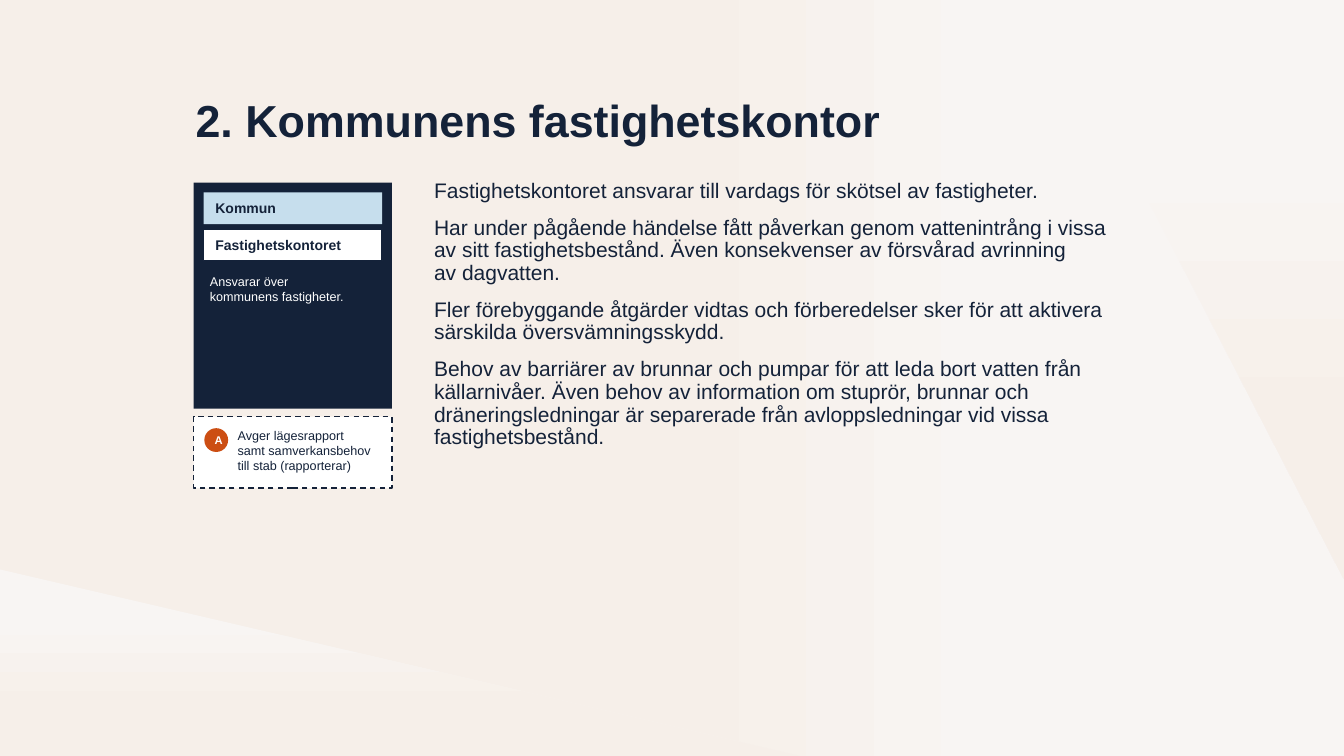
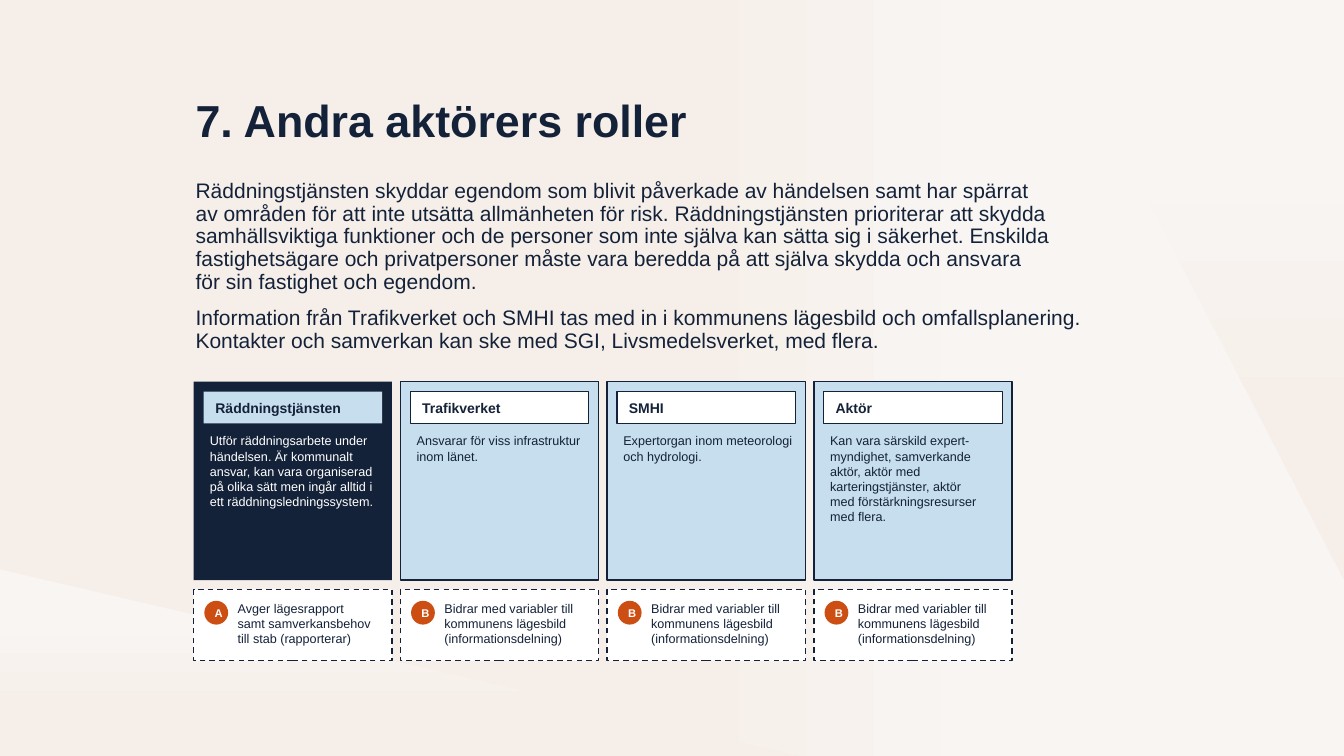
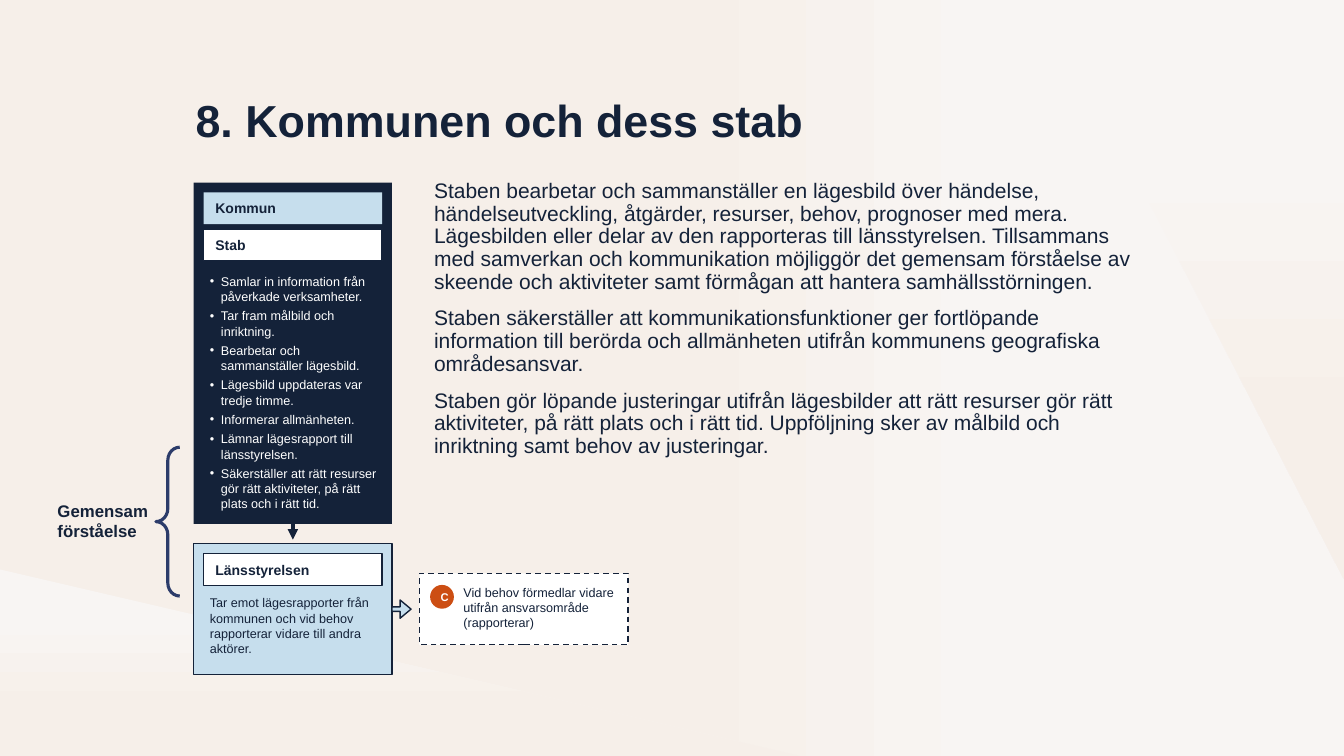
from dataclasses import dataclass

from lxml.etree import SubElement
from pptx import Presentation
from pptx.dml.color import RGBColor
from pptx.enum.dml import MSO_LINE
from pptx.enum.shapes import MSO_CONNECTOR, MSO_SHAPE as Preset
from pptx.enum.text import MSO_ANCHOR as Anchor, PP_ALIGN as Align
from pptx.oxml.ns import qn
from pptx.util import Cm, Pt


@dataclass(frozen=True)
class TextStyle:
    """Type size, colour, weight and paragraph spacing of one kind of text."""

    size: int
    color: RGBColor
    bold: bool = False
    line_spacing: float = 1.0
    before: int = 0
    after: int = 0
    align: Align = Align.LEFT
    bullet: bool = False


class Theme:
    """Colours, type and measures shared by all slides."""

    font = "Arial"
    navy = RGBColor.from_string("142239")
    light_blue = RGBColor.from_string("C6DEED")
    white = RGBColor.from_string("FFFFFF")
    orange = RGBColor.from_string("CC4E13")
    brace = RGBColor.from_string("2C3C6A")
    sand = RGBColor.from_string("F6EFE9")
    pale = RGBColor.from_string("F8F5F3")

    title = TextStyle(32, navy, bold=True, line_spacing=0.9)
    body = TextStyle(15, navy, line_spacing=0.9, before=10)
    label = TextStyle(10, navy, bold=True)
    small = TextStyle(9, navy)
    small_light = TextStyle(9, white)
    bullets = TextStyle(9, white, after=3, bullet=True)
    badge = TextStyle(8, white, bold=True, align=Align.CENTER)
    caption = TextStyle(12, navy, bold=True)

    slide_width, slide_height = Cm(33.87), Cm(19.05)
    left, card_top, card_width = Cm(4.88), Cm(4.6), Cm(5)
    card_pitch = Cm(5.21)
    report_height = Cm(1.8)
    text_left, text_top = Cm(4.68), Cm(4.42)
    side_text_left = Cm(10.69)
    text_right = Cm(28.75)


def set_gradient(fill, angle, stops):
    """Give a fill a linear gradient between two (position, colour) stops."""
    fill.gradient()
    fill.gradient_angle = angle
    for stop, (position, color) in zip(fill.gradient_stops, stops):
        stop.position = position
        stop.color.rgb = color


def add_bullet(paragraph):
    """Turn a paragraph into a hanging bullet."""
    properties = paragraph._p.get_or_add_pPr()
    properties.set("marL", str(Cm(0.28)))
    properties.set("indent", str(-Cm(0.28)))
    SubElement(properties, qn("a:buFont")).set("typeface", Theme.font)
    SubElement(properties, qn("a:buChar")).set("char", "•")


def write(shape, texts, style, anchor=Anchor.TOP, margins=None):
    """Fill a shape with paragraphs in one style."""
    frame = shape.text_frame
    frame.word_wrap = True
    frame.vertical_anchor = anchor
    if margins:
        (frame.margin_left, frame.margin_top,
         frame.margin_right, frame.margin_bottom) = margins
    for index, text in enumerate(texts):
        paragraph = frame.add_paragraph() if index else frame.paragraphs[0]
        paragraph.text = text
        if style.bullet:
            add_bullet(paragraph)
        paragraph.alignment = style.align
        paragraph.line_spacing = style.line_spacing
        paragraph.space_before = Pt(style.before if index else 0)
        paragraph.space_after = Pt(style.after)
        font = paragraph.font
        font.name, font.size, font.bold = Theme.font, Pt(style.size), style.bold
        font.color.rgb = style.color


def add_text(slide, box, texts, style, anchor=Anchor.TOP):
    """Place a text box."""
    write(slide.shapes.add_textbox(*box), texts, style, anchor)


def add_shape(slide, preset, box, fill=None, line=None, weight=1):
    """Place a flat preset shape with optional fill and outline."""
    shape = slide.shapes.add_shape(preset, *box)
    shape.shadow.inherit = False
    if fill is None:
        shape.fill.background()
    else:
        shape.fill.solid()
        shape.fill.fore_color.rgb = fill
    if line is None:
        shape.line.fill.background()
    else:
        shape.line.color.rgb = line
        shape.line.width = Pt(weight)
    return shape


def add_facet(slide, points):
    """Draw one background triangle that fades downwards."""
    builder = slide.shapes.build_freeform(*points[0])
    builder.add_line_segments(points[1:], close=True)
    facet = builder.convert_to_shape()
    facet.shadow.inherit = False
    facet.line.fill.background()
    set_gradient(facet.fill, 270, [(0.25, Theme.pale), (0.75, Theme.sand)])


def add_slide(presentation, title):
    """Add a blank slide with the background facets and the title."""
    slide = presentation.slides.add_slide(presentation.slide_layouts[6])
    width, height = Theme.slide_width, Theme.slide_height
    add_facet(slide, [(0, Cm(14.35)), (Cm(20.17), height), (0, height)])
    add_facet(slide, [(Cm(26.32), 0), (width, Cm(14.6)), (width, 0)])
    box = (Theme.text_left, Cm(2.34), Cm(23.72), Cm(1.5))
    add_text(slide, box, [title], Theme.title, Anchor.MIDDLE)
    return slide


def add_body(slide, left, height, texts):
    """Place the running text from a left edge to the shared right edge."""
    box = (left, Theme.text_top, Theme.text_right - left, height)
    add_text(slide, box, texts, Theme.body)


def add_card(slide, box, labels, texts, style, dark=False):
    """Draw an actor card with stacked labels above its description."""
    left, top, width, _ = box
    padding = Cm(0.25)
    card = add_shape(slide, Preset.RECTANGLE, box,
                     Theme.navy if dark else Theme.light_blue,
                     None if dark else Theme.navy)
    text_inset = Cm(0.3) + len(labels) * Cm(1)
    write(card, texts, style, margins=(Cm(0.41), text_inset, Cm(0.2), Cm(0.4)))
    for index, text in enumerate(labels):
        tinted = dark and index == 0
        label_box = (left + padding, top + padding + index * Cm(0.92),
                     width - 2 * padding, Cm(0.8))
        label = add_shape(slide, Preset.RECTANGLE, label_box,
                          Theme.light_blue if tinted else Theme.white,
                          None if tinted else Theme.navy)
        write(label, [text], Theme.label, Anchor.MIDDLE, (Cm(0.3), 0, Cm(0.2), 0))
    return card


def add_report(slide, box, letter, text, right_gap=Cm(0.25)):
    """Draw a dashed reporting box with a lettered badge."""
    left, top, width, _ = box
    frame = add_shape(slide, Preset.RECTANGLE, box, Theme.white, Theme.navy)
    frame.line.dash_style = MSO_LINE.DASH
    text_left = Cm(0.86)
    text_box = (left + text_left, top + Cm(0.16),
                width - text_left - right_gap, Cm(1.42))
    add_text(slide, text_box, [text], Theme.small)
    badge_box = (left + Cm(0.27), top + Cm(0.29), Cm(0.6), Cm(0.6))
    badge = add_shape(slide, Preset.OVAL, badge_box, Theme.orange)
    write(badge, [letter], Theme.badge, Anchor.MIDDLE)


def add_down_arrow(slide, card, length):
    """Draw an arrow downwards from the bottom of a card."""
    center, bottom = card.left + card.width // 2, card.top + card.height
    arrow = slide.shapes.add_connector(
        MSO_CONNECTOR.STRAIGHT, center, bottom, center, bottom + length)
    arrow.begin_connect(card, 2)
    arrow.line.color.rgb = Theme.navy
    arrow.line.width = Pt(2.5)
    SubElement(arrow.line._get_or_add_ln(), qn("a:tailEnd")).set("type", "triangle")
    SubElement(arrow._element.spPr, qn("a:effectLst"))


def add_brace(slide, box, caption):
    """Draw a left brace with its caption to the left."""
    left, top, width, height = box
    brace = add_shape(slide, Preset.LEFT_BRACE, box, line=Theme.brace, weight=2.25)
    brace.adjustments[0] = 0.55
    caption_height = Cm(1.3)
    caption_box = (left - Cm(2.73), top + (height - caption_height) // 2,
                   Cm(3.07), caption_height)
    add_text(slide, caption_box, caption, Theme.caption)


REPORT_TO_STAFF = ("A", "Avger lägesrapport samt samverkansbehov till stab (rapporterar)")
SHARE_INFORMATION = ("B", "Bidrar med variabler till kommunens lägesbild (informationsdelning)")


def build_property_office(presentation):
    """Build the slide on the municipal property office."""
    slide = add_slide(presentation, "2. Kommunens fastighetskontor")
    add_body(slide, Theme.side_text_left, Cm(10.9), [
        "Fastighetskontoret ansvarar till vardags för skötsel av fastigheter.",
        "Har under pågående händelse fått påverkan genom vattenintrång i vissa av sitt "
        "fastighetsbestånd. Även konsekvenser av försvårad avrinning \nav dagvatten.",
        "Fler förebyggande åtgärder vidtas och förberedelser sker för att aktivera "
        "särskilda översvämningsskydd.",
        "Behov av barriärer av brunnar och pumpar för att leda bort vatten från "
        "källarnivåer. Även behov av information om stuprör, brunnar och "
        "dräneringsledningar är separerade från avloppsledningar vid vissa "
        "fastighetsbestånd.",
    ])
    add_card(slide, (Theme.left, Theme.card_top, Theme.card_width, Cm(5.7)),
             ["Kommun", "Fastighetskontoret"],
             ["Ansvarar över \nkommunens fastigheter."], Theme.small_light, dark=True)
    add_report(slide, (Theme.left, Cm(10.5), Theme.card_width, Theme.report_height),
               *REPORT_TO_STAFF)


def build_other_actors(presentation):
    """Build the slide on the roles of other actors."""
    slide = add_slide(presentation, "7. Andra aktörers roller")
    add_body(slide, Theme.text_left, Cm(4.78), [
        "Räddningstjänsten skyddar egendom som blivit påverkade av händelsen samt har "
        "spärrat \nav områden för att inte utsätta allmänheten för risk. "
        "Räddningstjänsten prioriterar att skydda samhällsviktiga funktioner och de "
        "personer som inte själva kan sätta sig i säkerhet. Enskilda fastighetsägare "
        "och privatpersoner måste vara beredda på att själva skydda och ansvara \n"
        "för sin fastighet och egendom.",
        "Information från Trafikverket och SMHI tas med in i kommunens lägesbild och "
        "omfallsplanering. \nKontakter och samverkan kan ske med SGI, "
        "Livsmedelsverket, med flera.",
    ])
    actors = [
        ("Räddningstjänsten",
         "Utför räddningsarbete under händelsen. Är kommunalt ansvar, kan vara "
         "organiserad på olika sätt men ingår alltid i ett räddningsledningssystem.",
         REPORT_TO_STAFF),
        ("Trafikverket", "Ansvarar för viss infrastruktur inom länet.",
         SHARE_INFORMATION),
        ("SMHI", "Expertorgan inom meteorologi och hydrologi.", SHARE_INFORMATION),
        ("Aktör",
         "Kan vara särskild expert-myndighet, samverkande aktör, aktör med "
         "karteringstjänster, aktör \nmed förstärkningsresurser \nmed flera.",
         SHARE_INFORMATION),
    ]
    for index, (name, role, report) in enumerate(actors):
        left = Theme.left + index * Theme.card_pitch
        dark = index == 0
        add_card(slide, (left, Cm(9.62), Theme.card_width, Cm(5)), [name], [role],
                 Theme.small_light if dark else Theme.small, dark)
        add_report(slide, (left, Cm(14.85), Theme.card_width, Theme.report_height),
                   *report)


def build_staff(presentation):
    """Build the slide on the municipality and its staff."""
    slide = add_slide(presentation, "8. Kommunen och dess stab")
    add_body(slide, Theme.side_text_left, Cm(10.9), [
        "Staben bearbetar och sammanställer en lägesbild över händelse, "
        "händelseutveckling, åtgärder, resurser, behov, prognoser med mera. "
        "Lägesbilden eller delar av den rapporteras till länsstyrelsen. Tillsammans "
        "med samverkan och kommunikation möjliggör det gemensam förståelse av skeende "
        "och aktiviteter samt förmågan att hantera samhällsstörningen.",
        "Staben säkerställer att kommunikationsfunktioner ger fortlöpande information "
        "till berörda och allmänheten utifrån kommunens geografiska områdesansvar.",
        "Staben gör löpande justeringar utifrån lägesbilder att rätt resurser gör rätt "
        "aktiviteter, på rätt plats och i rätt tid. Uppföljning sker av målbild och "
        "inriktning samt behov av justeringar.",
    ])
    staff = add_card(
        slide, (Theme.left, Theme.card_top, Theme.card_width, Cm(8.6)),
        ["Kommun", "Stab"],
        ["Samlar in information från påverkade verksamheter.",
         "Tar fram målbild och inriktning.",
         "Bearbetar och sammanställer lägesbild.",
         "Lägesbild uppdateras var \ntredje timme.",
         "Informerar allmänheten.",
         "Lämnar lägesrapport till länsstyrelsen.",
         "Säkerställer att rätt resurser gör rätt aktiviteter, på rätt plats och i "
         "rätt tid."],
        Theme.bullets, dark=True)
    add_down_arrow(slide, staff, Cm(0.4))
    add_brace(slide, (Cm(3.93), Cm(11.27), Cm(0.6), Cm(3.75)),
              ["Gemensam", "förståelse"])
    county = add_card(
        slide, (Theme.left, Cm(13.7), Theme.card_width, Cm(3.3)), ["Länsstyrelsen"],
        ["Tar emot lägesrapporter från kommunen och vid behov rapporterar vidare till "
         "andra aktörer."], Theme.small)
    middle = county.top + county.height // 2
    arrow_height = Cm(0.46)
    arrow = add_shape(slide, Preset.RIGHT_ARROW,
                      (county.left + county.width, middle - arrow_height // 2,
                       Cm(0.48), arrow_height), Theme.light_blue, Theme.navy)
    arrow.adjustments[0] = 0.25
    arrow.adjustments[1] = 0.6
    add_report(slide, (Cm(10.57), middle - Theme.report_height // 2, Cm(5.26),
                       Theme.report_height),
               "C", "Vid behov förmedlar vidare utifrån ansvarsområde (rapporterar)",
               right_gap=0)


def main():
    """Build the presentation and save it."""
    presentation = Presentation()
    presentation.slide_width = Theme.slide_width
    presentation.slide_height = Theme.slide_height
    set_gradient(presentation.slide_master.background.fill, 0,
                 [(0.5, Theme.sand), (0.75, Theme.pale)])
    build_property_office(presentation)
    build_other_actors(presentation)
    build_staff(presentation)
    presentation.save("out.pptx")


if __name__ == "__main__":
    main()
